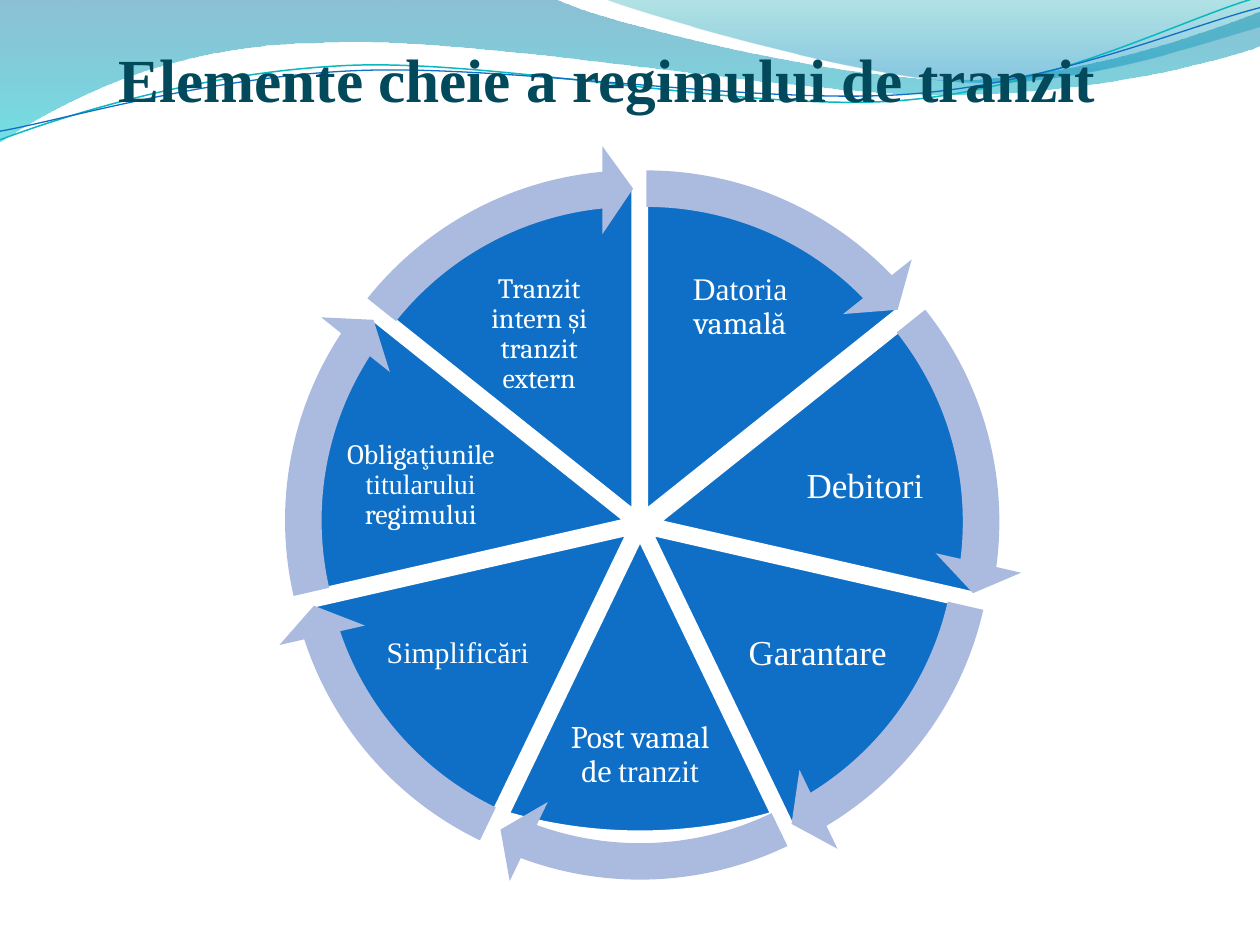
from lxml.etree import SubElement
from pptx import Presentation
from pptx.dml.color import RGBColor
from pptx.enum.shapes import MSO_SHAPE
from pptx.enum.text import MSO_ANCHOR, PP_ALIGN
from pptx.oxml.ns import qn
from pptx.util import Inches, Pt

BLUE = RGBColor(0x0F, 0x6F, 0xC6)
PALE = RGBColor(0xAB, 0xBB, 0xDF)
TEAL = RGBColor(0x0A, 0xB8, 0xBF)
DARK = RGBColor(0x03, 0x49, 0x5C)
WHITE = RGBColor(0xFF, 0xFF, 0xFF)
SKY_TOP, SKY_LOW = RGBColor(0x00, 0x74, 0xA1), RGBColor(0x00, 0xC6, 0xCF)
SEA_TOP, SEA_LOW = RGBColor(0x00, 0xA1, 0xA9), RGBColor(0x00, 0x8B, 0xBF)
CAMBRIA, TIMES = "Cambria", "Times New Roman"

prs = Presentation()
prs.slide_width, prs.slide_height = Inches(10), Inches(7.5)
W = prs.slide_width
CELL = W / 100
s = prs.slides.add_slide(prs.slide_layouts[6])


def draw_wave(start, pieces, close):
    pts = [start]
    for piece in pieces:
        pts += zip(piece[::2], piece[1::2])
    pts = [(x * CELL, y * CELL) for x, y in pts]
    fb = s.shapes.build_freeform(*pts[0], scale=1.0)
    fb.add_line_segments(pts[1:], close=close)
    sp = fb.convert_to_shape()
    sp.shadow.inherit = False
    lines = iter(list(sp._element.iter(qn("a:lnTo"))))
    for piece in pieces:
        first = next(lines)
        if len(piece) == 6:
            curve = first.makeelement(qn("a:cubicBezTo"))
            first.addprevious(curve)
            for line in (first, next(lines), next(lines)):
                curve.append(line[0])
                line.getparent().remove(line)
    return sp


def add_text(box, runs, frame, font, align):
    sp = s.shapes.add_textbox(*[int(v * CELL) for v in box])
    tf = sp.text_frame
    for name, value in frame.items():
        setattr(tf, name, value)
    p = tf.paragraphs[0]
    p.alignment = align
    for text, face in runs:
        r = p.add_run()
        r.text = text
        r.font.name = face
        r.font.color.rgb = font["color"]
        for name, value in font["format"].items():
            setattr(r.font, name, value)
    return p


bands = [
    ((0, -0.1), [(44, -0.1), (47.6, 1.7, 66.4, 6.3, 75.8, 6.3), (85.3, 6.3, 95.8, 2.6, 100, 0.9),
                 (100.1, 3.6), (98.3, 4.4, 87, 7.6, 74.6, 7.5), (62.2, 7.5, 38.2, 2.8, 25.7, 3.4),
                 (12.9, 3.5, 4.6, 8.3, -0.1, 11.3)],
     [(0, SKY_TOP, 45), (1, SKY_LOW, 55)]),
    ((47.9, -0.1), [(50.9, 1.1, 68.2, 6.2, 76.9, 6.5), (85.6, 6.9, 96.1, 3.2, 100, 2.1), (100, 0)],
     [(0, SEA_TOP, 30), (0.8, SEA_LOW, 45)]),
]
for start, pieces, stops in bands:
    sp = draw_wave(start, pieces, True)
    sp.line.fill.background()
    sp.fill.gradient()
    sp.fill.gradient_angle = 270
    for stop, (position, color, opacity) in zip(sp.fill.gradient_stops, stops):
        stop.position = position
        stop.color.rgb = color
    colors = sp._element.spPr.find(qn("a:gradFill")).iter(qn("a:srgbClr"))
    for node, (position, color, opacity) in zip(colors, stops):
        SubElement(node, qn("a:alpha")).set("val", str(opacity * 1000))

strands = [
    ((-0.2, 8.74), [(4.7, 7.17, 15.84, 4.1, 27.75, 4.15), (39.56, 4.21, 59.14, 9.34, 71.17, 9),
                    (83.2, 8.67, 93.95, 3.57, 100, 2.16)], TEAL, 0.85),
    ((-0.16, 8.05), [(4.58, 7.47, 16.43, 4.52, 28.34, 4.58), (40.35, 4.65, 59.58, 8.76, 71.6, 8.52),
                     (83.53, 8.28, 94.23, 4.18, 100.2, 2.97)], BLUE, 0.75),
]
for start, pieces, color, width in strands:
    sp = draw_wave(start, pieces, False)
    sp.rotation = 357.3
    sp.fill.background()
    sp.line.color.rgb = color
    sp.line.width = Pt(width)

ROUND = (51.6, 51.6)
wedges = [
    ((51.3, 40.5), ROUND, (52.6, 19.5, 12.3, 9.8), 18, [("Datoria", TIMES), (" vamală", CAMBRIA)]),
    ((52.35, 41.4), ROUND, (61.6, 34.35, 14.1, 8.6), 20, [("Debitori", TIMES)]),
    ((51.75, 42.4), ROUND, (59.1, 47.15, 12.3, 9.5), 20, [("Garantare ", TIMES)]),
    ((50.8, 42.85), (59.7, 46.4), (43.9, 56.1, 13.8, 7.7), 18,
     [("Post vamal de ", CAMBRIA), ("tranzit", TIMES)]),
    ((49.8, 42.4), ROUND, (30.2, 47.15, 12.3, 9.5), 17, [("Simplificări", TIMES)]),
    ((49.6, 41.3), (51.2, 51.6), (26.4, 34.25, 14, 8.6), 16,
     [("Obligaţiunile ", CAMBRIA), ("titularului", TIMES), (" regimului", CAMBRIA)]),
    ((50.25, 40.5), ROUND, (36.65, 21.65, 12.3, 9.8), 16,
     [("Tranzit intern și tranzit extern", CAMBRIA)]),
]
TURN = 216
STEP = TURN / len(wedges)
ARROW = 58
HEAD = 3.28
inset = Inches(0.03)
label_frame = {"word_wrap": True, "vertical_anchor": MSO_ANCHOR.MIDDLE, "margin_left": inset,
               "margin_right": inset, "margin_top": inset, "margin_bottom": inset}

for i, ((cx, cy), (w, h), box, size, runs) in enumerate(wedges):
    sp = s.shapes.add_shape(MSO_SHAPE.PIE, *[int(v * CELL) for v in (cx - w / 2, cy - h / 2, w, h)])
    sp.shadow.inherit = False
    sp.adjustments[0] = (162 + i * STEP) % TURN
    sp.adjustments[1] = (162 + (i + 1) * STEP) % TURN
    sp.fill.solid()
    sp.fill.fore_color.rgb = BLUE
    sp.line.color.rgb = WHITE
    sp.line.width = Pt(2)
    p = add_text(box, runs, label_frame, {"color": WHITE, "format": {"size": Pt(size)}}, PP_ALIGN.CENTER)
    p.line_spacing = 0.9

for i, ((cx, cy), *rest) in enumerate(wedges):
    box = (cx - ARROW / 2, cy - ARROW / 2, ARROW, ARROW)
    sp = s.shapes.add_shape(MSO_SHAPE.CIRCULAR_ARROW, *[int(v * CELL) for v in box])
    sp.shadow.inherit = False
    begin = (162 + i * STEP) % TURN
    end = (162 + (i + 1) * STEP - HEAD) % TURN
    for n, value in enumerate((0.05, HEAD, end, begin, 0.06)):
        sp.adjustments[n] = value
    sp.fill.solid()
    sp.fill.fore_color.rgb = PALE
    sp.line.fill.background()

title_frame = {"word_wrap": True, "vertical_anchor": MSO_ANCHOR.TOP, "margin_left": Inches(0.43),
               "margin_right": 0, "margin_top": Inches(0.04), "margin_bottom": 0}
add_text((5.1, 2.9, 88.2, 6.9), [("Elemente cheie a regimului de tranzit", TIMES)], title_frame,
         {"color": DARK, "format": {"size": Pt(35), "bold": True}}, PP_ALIGN.LEFT)

prs.save("out.pptx")
